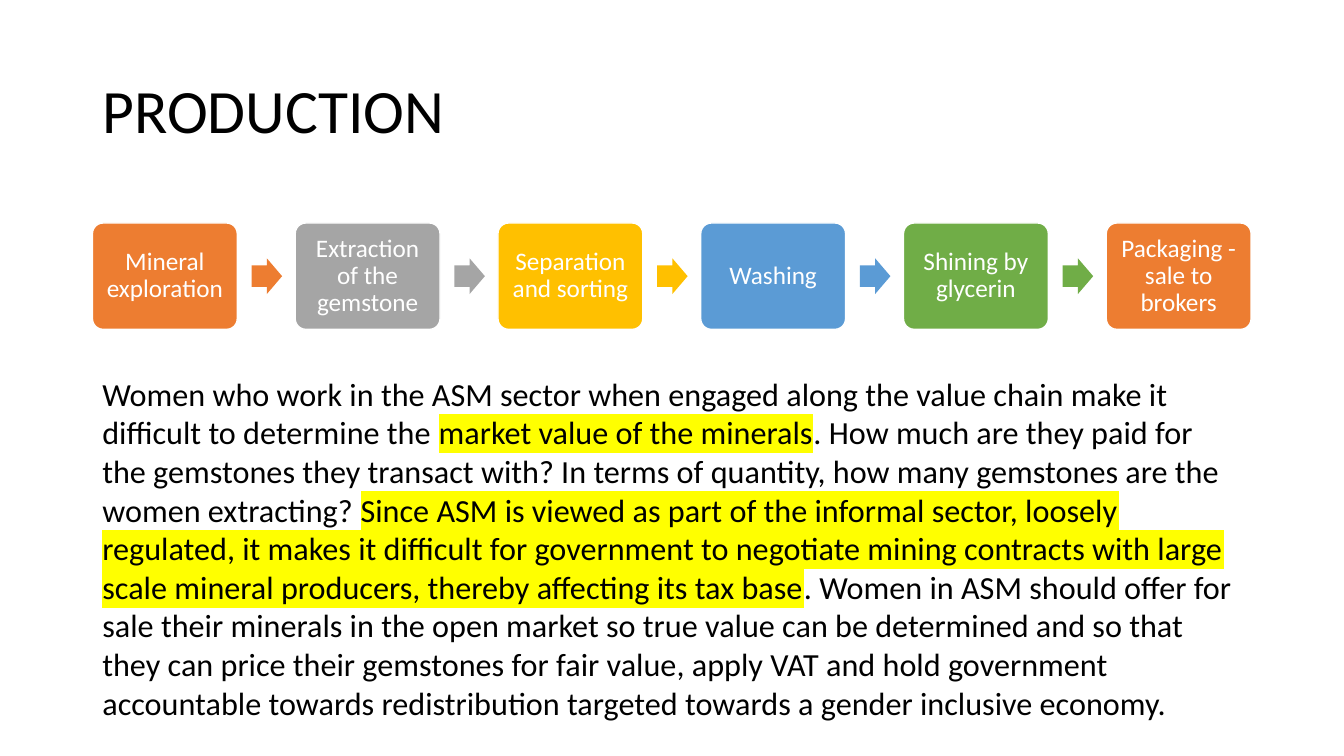
from dataclasses import dataclass

from lxml.etree import SubElement
from pptx import Presentation
from pptx.dml.color import RGBColor
from pptx.enum.shapes import MSO_SHAPE as Kind
from pptx.enum.text import MSO_ANCHOR as Anchor, PP_ALIGN as Align
from pptx.oxml.ns import qn
from pptx.shapes.autoshape import Shape
from pptx.slide import Slide
from pptx.text.text import TextFrame, _Paragraph as Para
from pptx.util import Cm, Pt

BLACK = RGBColor(0x00, 0x00, 0x00)
WHITE = RGBColor(0xFF, 0xFF, 0xFF)
ORANGE = RGBColor(0xED, 0x7D, 0x31)
GREY = RGBColor(0xA5, 0xA5, 0xA5)
GOLD = RGBColor(0xFF, 0xC0, 0x00)
BLUE = RGBColor(0x5B, 0x9B, 0xD5)
GREEN = RGBColor(0x70, 0xAD, 0x47)
YELLOW = RGBColor(0xFF, 0xFF, 0x00)

LEFT, WIDE = 2.33, 29.21
STEP = 5.11
BOX_TOP, BOX_WIDE, BOX_HIGH = 5.62, 3.65, 2.68
TIP_GAP, TIP_WIDE, TIP_HIGH = 0.36, 0.77, 0.9


@dataclass(frozen=True)
class Stage:
    label: str
    color: RGBColor


@dataclass(frozen=True)
class Span:
    text: str
    marked: bool = False


STAGES = [
    Stage("Mineral exploration", ORANGE),
    Stage("Extraction of the gemstone", GREY),
    Stage("Separation and sorting", GOLD),
    Stage("Washing", BLUE),
    Stage("Shining by glycerin", GREEN),
    Stage("Packaging - sale to brokers", ORANGE),
]

BODY = [
    Span("Women who work in the ASM sector when engaged along the value chain "
         "make it difficult to determine the "),
    Span("market value of the minerals", True),
    Span(". How much are they paid for the gemstones they transact with? "
         "In terms of quantity, how many gemstones are the women extracting? "),
    Span("Since ASM is viewed as part of the informal sector, loosely regulated, "
         "it makes it difficult for government to negotiate mining contracts with "
         "large scale mineral producers, thereby affecting its tax base", True),
    Span(". Women in ASM should offer for sale their minerals in the open market "
         "so true value can be determined and so that they can price their "
         "gemstones for fair value, apply VAT and hold government accountable "
         "towards redistribution targeted towards a gender inclusive economy."),
]


def write(frame: TextFrame, spans: list[Span], size: float, color: RGBColor) -> Para:
    frame.word_wrap = True
    para = frame.paragraphs[0]
    para.font.name = "Calibri"
    para.font.size = Pt(size)
    para.font.color.rgb = color
    for span in spans:
        run = para.add_run()
        run.text = span.text
        if span.marked:
            mark = SubElement(run._r.get_or_add_rPr(), qn("a:highlight"))
            SubElement(mark, qn("a:srgbClr"), val=str(YELLOW))
    return para


def add_text(slide: Slide, top: float, high: float) -> TextFrame:
    return slide.shapes.add_textbox(Cm(LEFT), Cm(top), Cm(WIDE), Cm(high)).text_frame


def add_solid(slide: Slide, kind: Kind, left: float, top: float,
              wide: float, high: float, color: RGBColor) -> Shape:
    shape = slide.shapes.add_shape(kind, Cm(left), Cm(top), Cm(wide), Cm(high))
    shape.shadow.inherit = False
    shape.fill.solid()
    shape.fill.fore_color.rgb = color
    shape.line.fill.background()
    return shape


def add_stage(slide: Slide, stage: Stage, left: float) -> None:
    box = add_solid(slide, Kind.ROUNDED_RECTANGLE, left, BOX_TOP,
                    BOX_WIDE, BOX_HIGH, stage.color)
    box.adjustments[0] = 0.1
    box.line.color.rgb = WHITE
    box.line.width = Pt(1)
    frame = box.text_frame
    frame.margin_left = frame.margin_right = Cm(0.18)
    frame.margin_top = frame.margin_bottom = Cm(0.18)
    frame.vertical_anchor = Anchor.MIDDLE
    para = write(frame, [Span(stage.label)], 18, WHITE)
    para.alignment = Align.CENTER
    para.line_spacing = 0.9


def add_tip(slide: Slide, stage: Stage, left: float) -> None:
    top = BOX_TOP + (BOX_HIGH - TIP_HIGH) / 2
    tip = add_solid(slide, Kind.RIGHT_ARROW, left + BOX_WIDE + TIP_GAP, top,
                    TIP_WIDE, TIP_HIGH, stage.color)
    tip.adjustments[0] = 0.6
    tip.adjustments[1] = 0.5


def main() -> None:
    deck = Presentation()
    deck.slide_width, deck.slide_height = Cm(33.87), Cm(19.05)
    slide = deck.slides.add_slide(deck.slide_layouts[6])

    title = add_text(slide, 1.01, 3.68)
    title.vertical_anchor = Anchor.MIDDLE
    write(title, [Span("PRODUCTION")], 44, BLACK).line_spacing = 0.9

    for rank, stage in enumerate(STAGES):
        left = LEFT + rank * STEP
        add_stage(slide, stage, left)
        if rank < len(STAGES) - 1:
            add_tip(slide, stage, left)

    write(add_text(slide, 9.3, 9.09), BODY, 23, BLACK)
    deck.save("out.pptx")


if __name__ == "__main__":
    main()
